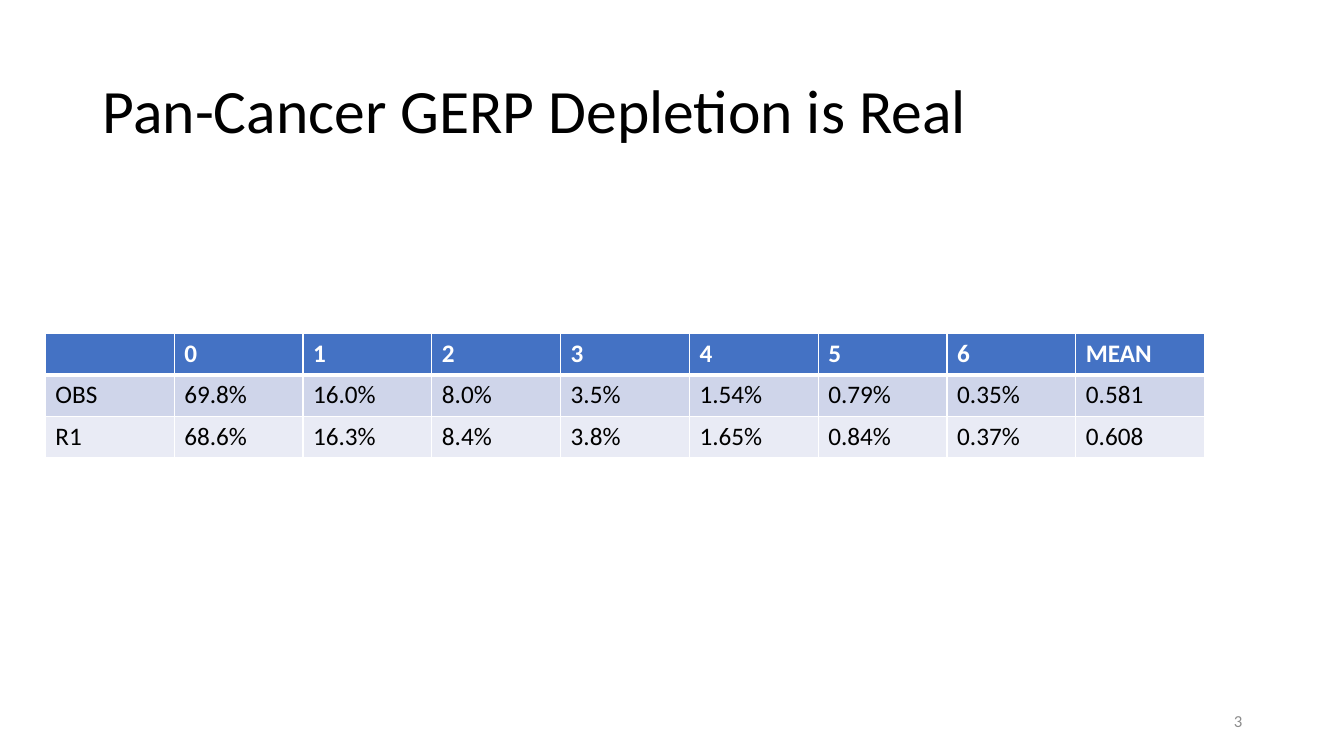
import pptx
import pptx.dml.color
import pptx.enum.text
import pptx.oxml
import pptx.oxml.ns
import pptx.util
from pptx.util import Inches

ALIGN = pptx.enum.text.PP_ALIGN
ANCHOR = pptx.enum.text.MSO_ANCHOR


def color(value):
    return pptx.dml.color.RGBColor.from_string(value)


class SlideBuilder:
    font = "Calibri"
    black, white, gray = "000000", "FFFFFF", "8C8C8C"
    header_fill = "4472C4"
    band_fills = ("CFD5EA", "E9EBF5")

    def __init__(self, deck):
        self.page = deck.slides.add_slide(deck.slide_layouts[6])

    def add_span(self, para, text, size, fill, bold=False):
        span = para.add_run()
        span.text = text
        span.font.name = self.font
        span.font.size = pptx.util.Pt(size)
        span.font.bold = bold
        span.font.color.rgb = color(fill)

    def add_text(self, left, top, width, height, text, size, fill, align=ALIGN.LEFT, spacing=1.0):
        box = self.page.shapes.add_textbox(Inches(left), Inches(top), Inches(width), Inches(height))
        box.text_frame.word_wrap = True
        box.text_frame.vertical_anchor = ANCHOR.MIDDLE
        para = box.text_frame.paragraphs[0]
        para.alignment = align
        para.line_spacing = spacing
        self.add_span(para, text, size, fill)

    def add_border(self, cell, side, points):
        line = pptx.oxml.parse_xml(
            f'<a:{side} {pptx.oxml.ns.nsdecls("a")} w="{pptx.util.Pt(points)}">'
            f'<a:solidFill><a:srgbClr val="{self.white}"/></a:solidFill></a:{side}>'
        )
        cell._tc.get_or_add_tcPr().append(line)

    def add_table(self, left, top, width, row_height, rows):
        frame = self.page.shapes.add_table(
            len(rows), len(rows[0]), Inches(left), Inches(top),
            Inches(width), Inches(row_height * len(rows)),
        )
        for row, values in enumerate(rows):
            header = row == 0
            fill = self.header_fill if header else self.band_fills[(row - 1) % 2]
            for column, value in enumerate(values):
                cell = frame.table.cell(row, column)
                self.add_border(cell, "lnL", 1)
                self.add_border(cell, "lnR", 1)
                self.add_border(cell, "lnT", 3 if row == 1 else 1)
                self.add_border(cell, "lnB", 3 if header else 1)
                cell.fill.solid()
                cell.fill.fore_color.rgb = color(fill)
                if value:
                    para = cell.text_frame.paragraphs[0]
                    self.add_span(para, value, 18, self.white if header else self.black, header)


def main():
    deck = pptx.Presentation()
    deck.slide_width = Inches(13.33)
    deck.slide_height = Inches(7.5)
    slide = SlideBuilder(deck)
    slide.add_text(0.92, 0.4, 11.5, 1.45, "Pan-Cancer GERP Depletion is Real", 44, slide.black, spacing=0.9)
    slide.add_table(0.45, 3.31, 11.5, 0.41, [
        ["", "0", "1", "2", "3", "4", "5", "6", "MEAN"],
        ["OBS", "69.8%", "16.0%", "8.0%", "3.5%", "1.54%", "0.79%", "0.35%", "0.581"],
        ["R1", "68.6%", "16.3%", "8.4%", "3.8%", "1.65%", "0.84%", "0.37%", "0.608"],
    ])
    slide.add_text(9.42, 6.95, 3, 0.4, "3", 12, slide.gray, ALIGN.RIGHT)
    deck.save("out.pptx")


if __name__ == "__main__":
    main()
